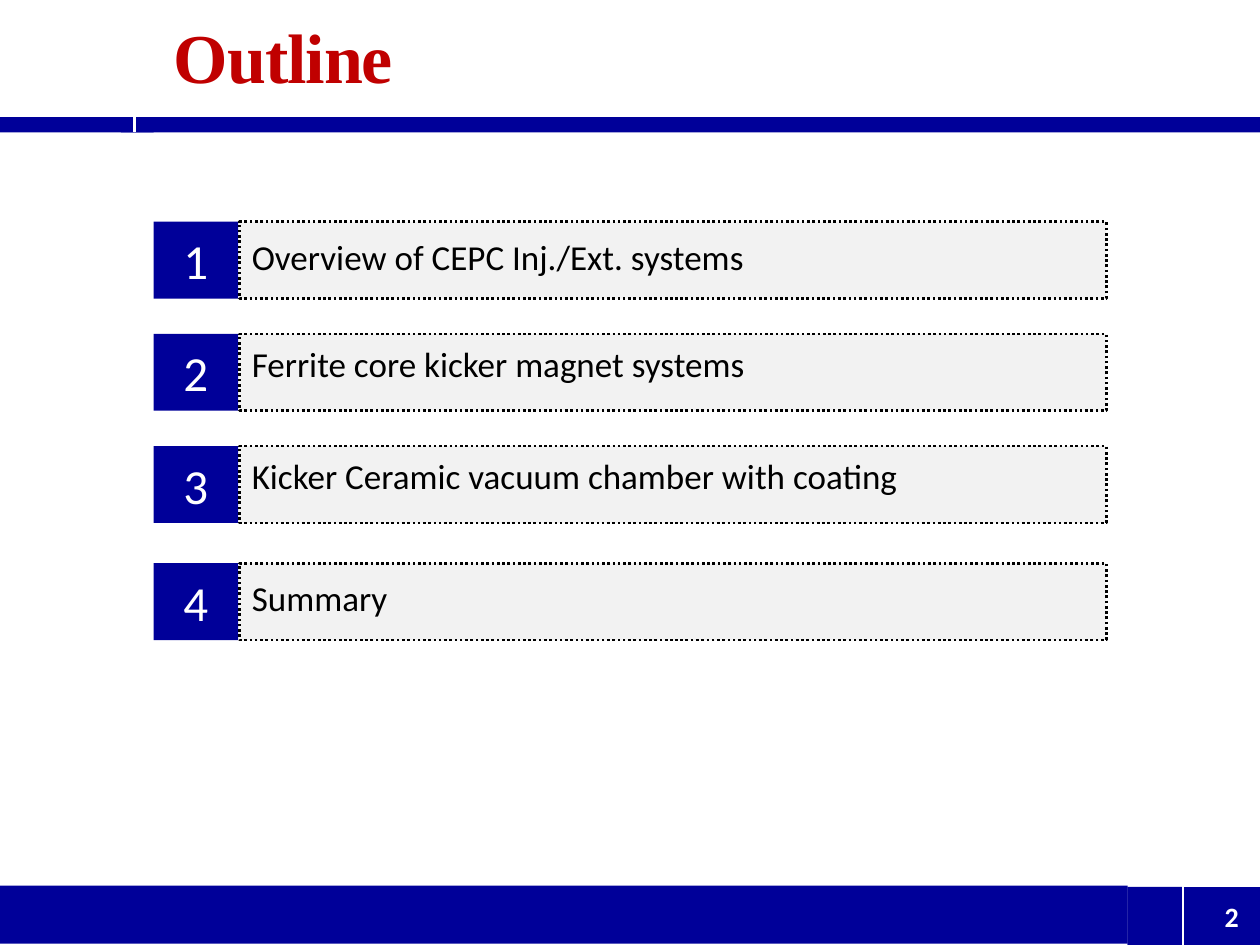
"""Build the outline slide with its numbered agenda rows."""
from typing import NamedTuple, Optional

from pptx import Presentation
from pptx import util as u
from pptx.dml.color import RGBColor
from pptx.enum import dml, shapes, text
from pptx.oxml import ns, xmlchemy

NAVY = RGBColor(0x00, 0x00, 0x99)
RED = RGBColor(0xC0, 0x00, 0x00)
GRAY = RGBColor(0xF2, 0xF2, 0xF2)
BLACK = RGBColor(0x00, 0x00, 0x00)
WHITE = RGBColor(0xFF, 0xFF, 0xFF)

RECT = shapes.MSO_SHAPE.RECTANGLE
TRIANGLE = shapes.MSO_SHAPE.RIGHT_TRIANGLE
LEFT, CENTER, RIGHT = text.PP_ALIGN.LEFT, text.PP_ALIGN.CENTER, text.PP_ALIGN.RIGHT


class Box(NamedTuple):
    left: float
    top: float
    width: float
    height: float


class Block(NamedTuple):
    box: Box
    kind: shapes.MSO_SHAPE = RECT
    flip: bool = False


class Divider(NamedTuple):
    x: float
    top: float
    bottom: float


class Row(NamedTuple):
    top: float
    label: str
    spacing: object


BLOCKS = [
    Block(Box(0.96, 0.93, 9.04, 0.12)),
    Block(Box(1.07, 0.93, 0.15, 0.12), TRIANGLE),
    Block(Box(0, 0.93, 1.07, 0.12)),
    Block(Box(0, 7.03, 8.95, 0.46)),
    Block(Box(8.95, 7.04, 1.05, 0.46)),
    Block(Box(8.95, 7.04, 0.43, 0.46), TRIANGLE, True),
]
DIVIDERS = [Divider(1.07, 0.9, 1.05), Divider(9.39, 7.04, 7.5)]
ROWS = [
    Row(1.76, "Overview of CEPC Inj./Ext. systems", 0.8),
    Row(2.65, "Ferrite core kicker magnet systems", u.Pt(14)),
    Row(3.54, "Kicker Ceramic vacuum chamber with coating", u.Pt(14)),
    Row(4.47, "Summary", 0.8),
]


def inches(box: Box) -> list:
    return [u.Inches(v) for v in box]


def add_block(s, box: Box, fill: RGBColor, kind=RECT, flip: bool = False):
    sp = s.shapes.add_shape(kind, *inches(box))
    sp.shadow.inherit = False
    sp.fill.solid()
    sp.fill.fore_color.rgb = fill
    sp.line.fill.background()
    if flip:
        sp._element.spPr.find(ns.qn("a:xfrm")).set("flipV", "1")
    return sp


def add_divider(s, d: Divider) -> None:
    x = u.Inches(d.x)
    line = s.shapes.add_connector(
        shapes.MSO_CONNECTOR.STRAIGHT, x, u.Inches(d.top), x, u.Inches(d.bottom))
    line.line.color.rgb = WHITE
    line.line.width = u.Pt(1.5)
    xmlchemy.OxmlElement("a:effectLst")
    line._element.spPr.append(xmlchemy.OxmlElement("a:effectLst"))


def write(sp, words: str, size: float, color: RGBColor, align=LEFT,
          font: str = "Calibri", bold: bool = False, spacing: Optional[object] = None):
    tf = sp.text_frame
    tf.word_wrap = True
    tf.vertical_anchor = text.MSO_ANCHOR.MIDDLE
    p = tf.paragraphs[0]
    p.alignment = align
    if spacing is not None:
        p.line_spacing = spacing
    r = p.add_run()
    r.text = words
    r.font.size = u.Pt(size)
    r.font.name = font
    r.font.bold = bold
    r.font.color.rgb = color
    return r


def add_row(s, number: int, row: Row) -> None:
    badge = add_block(s, Box(1.22, row.top, 0.67, 0.61), NAVY)
    write(badge, str(number), 28, WHITE, CENTER)
    bar = add_block(s, Box(1.9, row.top, 6.88, 0.61), GRAY)
    bar.line.color.rgb = BLACK
    bar.line.width = u.Pt(1.5)
    bar.line.dash_style = dml.MSO_LINE.ROUND_DOT
    write(bar, row.label, 20, BLACK, spacing=row.spacing)


def add_title(s) -> None:
    title = s.shapes.title
    title.left, title.top, title.width, title.height = inches(Box(1.28, 0.12, 8.62, 0.73))
    r = write(title, "Outline", 40, RED, font="Times New Roman", bold=True, spacing=0.9)
    r.font._element.set("spc", "-60")


def main() -> None:
    prs = Presentation()
    prs.slide_width, prs.slide_height = u.Inches(10), u.Inches(7.5)
    s = prs.slides.add_slide(prs.slide_layouts[5])
    for block in BLOCKS:
        add_block(s, block.box, NAVY, block.kind, block.flip)
    for divider in DIVIDERS:
        add_divider(s, divider)
    page = s.shapes.add_textbox(*inches(Box(8.46, 7.04, 1.47, 0.46)))
    write(page, "2", 16, WHITE, RIGHT, bold=True)
    add_title(s)
    for number, row in enumerate(ROWS, 1):
        add_row(s, number, row)
    prs.save("out.pptx")


if __name__ == "__main__":
    main()
